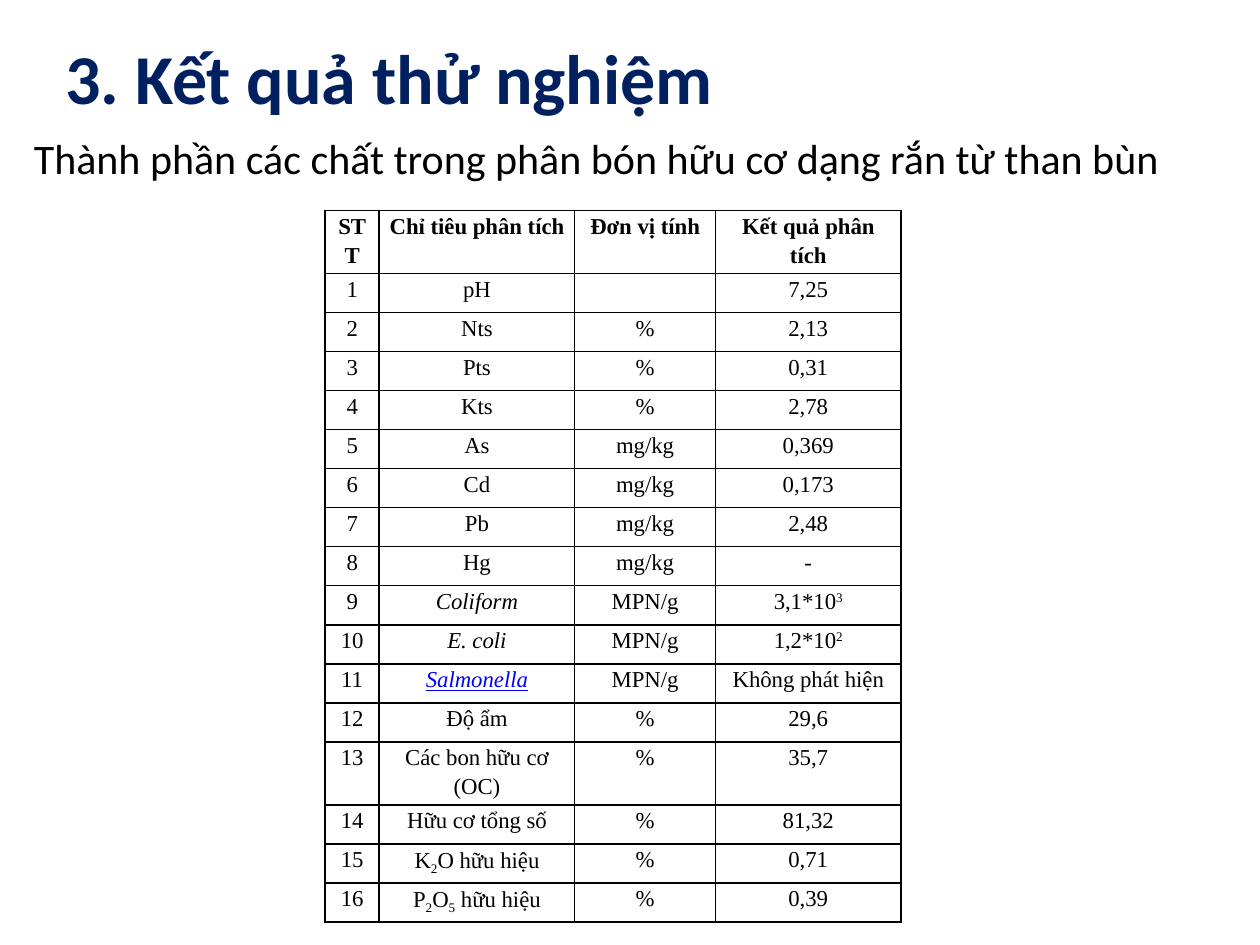
"""Build the slide with the test results for solid organic fertiliser made from peat."""
from lxml import etree
from pptx import Presentation
from pptx.dml.color import RGBColor
from pptx.enum.text import MSO_ANCHOR, PP_ALIGN
from pptx.oxml.ns import qn
from pptx.util import Inches, Pt

COLORS = {"title": "002060", "text": "000000", "link": "0000FF", "border": "000000"}
BASELINES = {"^": "30000", "_": "-25000"}
HEADERS = ["STT", "Chỉ tiêu phân tích", "Đơn vị tính", "Kết quả phân tích"]
RESULTS = [
    ("pH", "", "7,25"),
    ("Nts", "%", "2,13"),
    ("Pts", "%", "0,31"),
    ("Kts", "%", "2,78"),
    ("As", "mg/kg", "0,369"),
    ("Cd", "mg/kg", "0,173"),
    ("Pb", "mg/kg", "2,48"),
    ("Hg", "mg/kg", "-"),
    ("Coliform", "MPN/g", "3,1*10|^3"),
    ("E. coli", "MPN/g", "1,2*10|^2"),
    ("Salmonella", "MPN/g", "Không phát hiện"),
    ("Độ ẩm", "%", "29,6"),
    ("Các bon hữu cơ (OC)", "%", "35,7"),
    ("Hữu cơ tổng số", "%", "81,32"),
    ("K|_2|O hữu hiệu", "%", "0,71"),
    ("P|_2|O|_5| hữu hiệu", "%", "0,39"),
]
BACTERIA = {"Coliform", "E. coli", "Salmonella"}
COLUMN_WIDTHS = [0.43, 1.55, 1.12, 1.47]
HEADER_HEIGHT, ROW_HEIGHT = 0.5, 0.31


def style_font(font, name, size, color, bold=False):
    font.name = name
    font.size = Pt(size)
    font.bold = bold
    font.color.rgb = RGBColor.from_string(COLORS[color])


def add_borders(cell):
    properties = cell._tc.get_or_add_tcPr()
    for position, side in enumerate(("a:lnL", "a:lnR", "a:lnT", "a:lnB")):
        line = etree.Element(qn(side), w=str(Pt(1)))
        fill = etree.SubElement(line, qn("a:solidFill"))
        etree.SubElement(fill, qn("a:srgbClr"), val=COLORS["border"])
        properties.insert(position, line)


presentation = Presentation()
presentation.slide_width = Inches(10)
presentation.slide_height = Inches(7.5)
slide = presentation.slides.add_slide(presentation.slide_layouts[6])

headings = [
    ("3. Kết quả thử nghiệm", (0.42, 0.17, 9, 0.87), 40, "title", True, MSO_ANCHOR.MIDDLE, 0),
    ("Thành phần các chất trong phân bón hữu cơ dạng rắn từ than bùn",
     (0.17, 1, 9.58, 5.7), 24, "text", False, MSO_ANCHOR.TOP, 4.8),
]
for text, box, size, color, bold, anchor, space_before in headings:
    text_frame = slide.shapes.add_textbox(*map(Inches, box)).text_frame
    text_frame.word_wrap = True
    text_frame.vertical_anchor = anchor
    text_frame.text = text
    paragraph = text_frame.paragraphs[0]
    paragraph.space_before = Pt(space_before)
    style_font(paragraph.runs[0].font, "Calibri", size, color, bold)

rows = [HEADERS] + [(str(number), *result) for number, result in enumerate(RESULTS, 1)]
table = slide.shapes.add_table(
    len(rows), len(HEADERS), Inches(2.58), Inches(1.67),
    Inches(sum(COLUMN_WIDTHS)), Inches(HEADER_HEIGHT + ROW_HEIGHT * len(RESULTS)),
).table
table.horz_banding = False
for column, width in zip(table.columns, COLUMN_WIDTHS):
    column.width = Inches(width)

for row_index, row in enumerate(rows):
    table.rows[row_index].height = Inches(ROW_HEIGHT if row_index else HEADER_HEIGHT)
    for column_index, text in enumerate(row):
        cell = table.cell(row_index, column_index)
        cell.fill.background()
        add_borders(cell)
        cell.margin_left = cell.margin_right = Inches(0.06)
        cell.margin_top = cell.margin_bottom = 0
        if not text:
            continue
        paragraph = cell.text_frame.paragraphs[0]
        paragraph.alignment = PP_ALIGN.CENTER
        paragraph.line_spacing = 1.15
        paragraph.space_before = paragraph.space_after = Pt(6)
        for part in text.split("|"):
            run = paragraph.add_run()
            run.text = part.lstrip("^_")
            is_link = part == "Salmonella"
            style_font(run.font, "Times New Roman", 13, "link" if is_link else "text", row_index == 0)
            run.font.italic = part in BACTERIA
            run.font.underline = is_link
            if part[0] in BASELINES:
                run.font._element.set("baseline", BASELINES[part[0]])

presentation.save("out.pptx")
